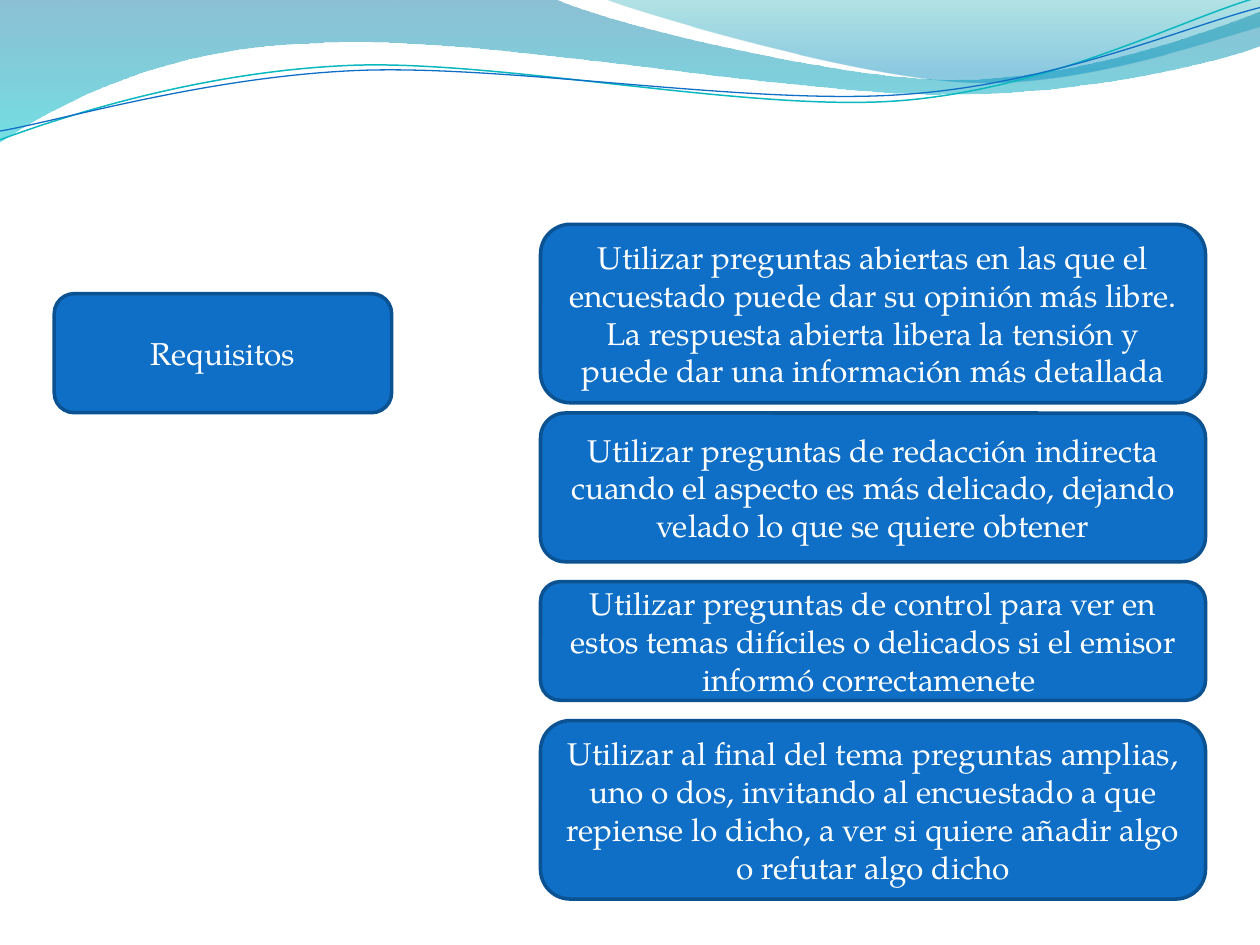
"""Build the slide on survey question requirements with its wave header."""
from dataclasses import dataclass
from math import cos, radians, sin

from lxml.etree import SubElement
from pptx import Presentation
from pptx.dml.color import RGBColor as Rgb
from pptx.enum.shapes import MSO_SHAPE as Shape
from pptx.enum.text import MSO_ANCHOR as Anchor, PP_ALIGN as Align
from pptx.oxml.ns import qn
from pptx.util import Pt


@dataclass(frozen=True)
class Theme:
    """Keep the colours and type sizes."""

    font: str = "TeX Gyre Pagella"
    size: float = 18
    text: str = "FFFFFF"
    fill: str = "0F6FC6"
    border: str = "0B5292"
    border_width: float = 2
    teal: str = "0AB8BF"
    broad_wave: tuple = ((0, "0074A1", 45), (1, "00C6CF", 55))
    right_wave: tuple = ((0, "00A1A9", 30), (0.8, "008BBF", 45))


BROAD_WAVE = [
    (0, 0), (316.8, -0.7),
    (342.7, 12.2, 478.1, 45.4, 545.8, 45.4),
    (614.2, 45.4, 689.8, 18.7, 720, 6.5),
    (720.7, 25.9),
    (707.8, 31.7, 626.4, 54.7, 537.1, 54),
    (447.8, 54, 275, 20.2, 185, 24.5),
    (92.9, 25.9, 33.1, 59.8, -0.7, 81.4),
    (0, 0),
]
RIGHT_WAVE = [
    (344.9, -0.7),
    (366.5, 7.9, 491, 44.6, 553.7, 46.8),
    (616.3, 49.7, 691.9, 23, 720, 15.1),
    (720, 0), (344.9, -0.7),
]
TEAL_LINE = [
    (0, 79.9),
    (34.6, 67, 113.8, 41, 199.4, 37.4),
    (284.4, 33.8, 427, 64.1, 513.4, 57.6),
    (599.8, 51.1, 675.4, 10.8, 718.6, -1.4),
]
BLUE_LINE = [
    (0, 74.9),
    (33.8, 69.1, 118.1, 43.9, 203.8, 40.3),
    (290.2, 36.7, 429.8, 60.5, 516.2, 54),
    (601.9, 48.2, 677.5, 15.1, 720, 4.3),
]
TILT = 357.3
REQUIREMENTS = [
    (128.2, 102, [
        "Utilizar preguntas abiertas en las que el encuestado puede dar su opinión más libre.",
        "La respuesta abierta libera la tensión y puede dar una información más detallada",
    ]),
    (236, 85, [
        "Utilizar preguntas de redacción indirecta cuando el aspecto es más delicado, "
        "dejando velado lo que se quiere obtener",
    ]),
    (332.4, 67.8, [
        "Utilizar preguntas de control para ver en estos temas difíciles o delicados "
        "si el emisor informó correctamenete ",
    ]),
    (411.8, 102, [
        "Utilizar al final del tema preguntas amplias, uno o dos, invitando al encuestado "
        "a que repiense lo dicho, a ver si quiere añadir algo o refutar algo dicho",
    ]),
]


def localize(part, box, rotation):
    """Return the points of a part in the unrotated frame of a box."""
    left, top, width, height = box
    angle = radians(-rotation)
    points = []
    for x, y in zip(part[::2], part[1::2]):
        dx, dy = x - left - width / 2, y - top - height / 2
        points.append((Pt(width / 2 + dx * cos(angle) - dy * sin(angle)),
                       Pt(height / 2 + dx * sin(angle) + dy * cos(angle))))
    return points


class Page:
    """Hold the theme and the current slide."""

    def __init__(self, slide, theme):
        """Start on a slide with a theme."""
        self.shapes = slide.shapes
        self.theme = theme

    def outline(self, parts, box, rotation=0, close=False):
        """Add a freeform of straight and cubic parts in a box."""
        start, *rest = [localize(part, box, rotation) for part in parts]
        builder = self.shapes.build_freeform(*start[0])
        builder.add_line_segments([points[-1] for points in rest], close=close)
        shape = builder.convert_to_shape()
        shape.left, shape.top, shape.width, shape.height = map(Pt, box)
        shape.rotation = rotation
        shape.shadow.inherit = False
        track = next(shape.element.iter(qn("a:path")))
        track.set("w", str(shape.width))
        track.set("h", str(shape.height))
        for node, points in zip(list(track), [start, *rest]):
            node.clear()
            if len(points) == 3:
                node_curve = SubElement(track, qn("a:cubicBezTo"))
                track.replace(node, node_curve)
                node = node_curve
            for x, y in points:
                point = SubElement(node, qn("a:pt"))
                point.set("x", str(x))
                point.set("y", str(y))
        return shape

    def wave(self, parts, box, stops):
        """Add a band with a translucent vertical gradient."""
        shape = self.outline(parts, box, close=True)
        shape.line.fill.background()
        shape.fill.gradient()
        shape.fill.gradient_angle = 270
        for stop, (position, color, _) in zip(shape.fill.gradient_stops, stops):
            stop.position = position
            stop.color.rgb = Rgb.from_string(color)
        colors = shape.element.spPr.iter(qn("a:srgbClr"))
        for node, (_, _, opacity) in zip(colors, stops):
            SubElement(node, qn("a:alpha")).set("val", str(opacity * 1000))

    def curve(self, parts, box, color, width):
        """Add an open curved line."""
        shape = self.outline(parts, box, TILT)
        shape.fill.background()
        shape.line.color.rgb = Rgb.from_string(color)
        shape.line.width = Pt(width)

    def card(self, left, top, width, height, texts):
        """Add a rounded box with centred paragraphs."""
        theme = self.theme
        box = self.shapes.add_shape(Shape.ROUNDED_RECTANGLE,
                                    Pt(left), Pt(top), Pt(width), Pt(height))
        box.shadow.inherit = False
        box.fill.solid()
        box.fill.fore_color.rgb = Rgb.from_string(theme.fill)
        box.line.color.rgb = Rgb.from_string(theme.border)
        box.line.width = Pt(theme.border_width)
        frame = box.text_frame
        frame.word_wrap = True
        frame.vertical_anchor = Anchor.MIDDLE
        for index, text in enumerate(texts):
            para = frame.add_paragraph() if index else frame.paragraphs[0]
            para.alignment = Align.CENTER
            span = para.add_run()
            span.text = text
            span.font.name = theme.font
            span.font.size = Pt(theme.size)
            span.font.color.rgb = Rgb.from_string(theme.text)


def main():
    """Compose and save the deck."""
    deck = Presentation()
    deck.slide_width, deck.slide_height = Pt(720), Pt(540)
    theme = Theme()
    page = Page(deck.slides.add_slide(deck.slide_layouts[6]), theme)
    page.wave(BROAD_WAVE, (-0.7, -0.7, 721.4, 82.1), theme.broad_wave)
    page.wave(RIGHT_WAVE, (344.9, -0.7, 375.1, 50.4), theme.right_wave)
    page.curve(TEAL_LINE, (-1.4, 15.8, 721.4, 51.1), theme.teal, 0.85)
    page.curve(BLUE_LINE, (-1.4, 21.6, 722.2, 41.8), theme.fill, 0.75)
    page.card(31, 167.8, 192.8, 68, ["Requisitos"])
    for top, height, texts in REQUIREMENTS:
        page.card(308.9, top, 380, height, texts)
    deck.save("out.pptx")


if __name__ == "__main__":
    main()
